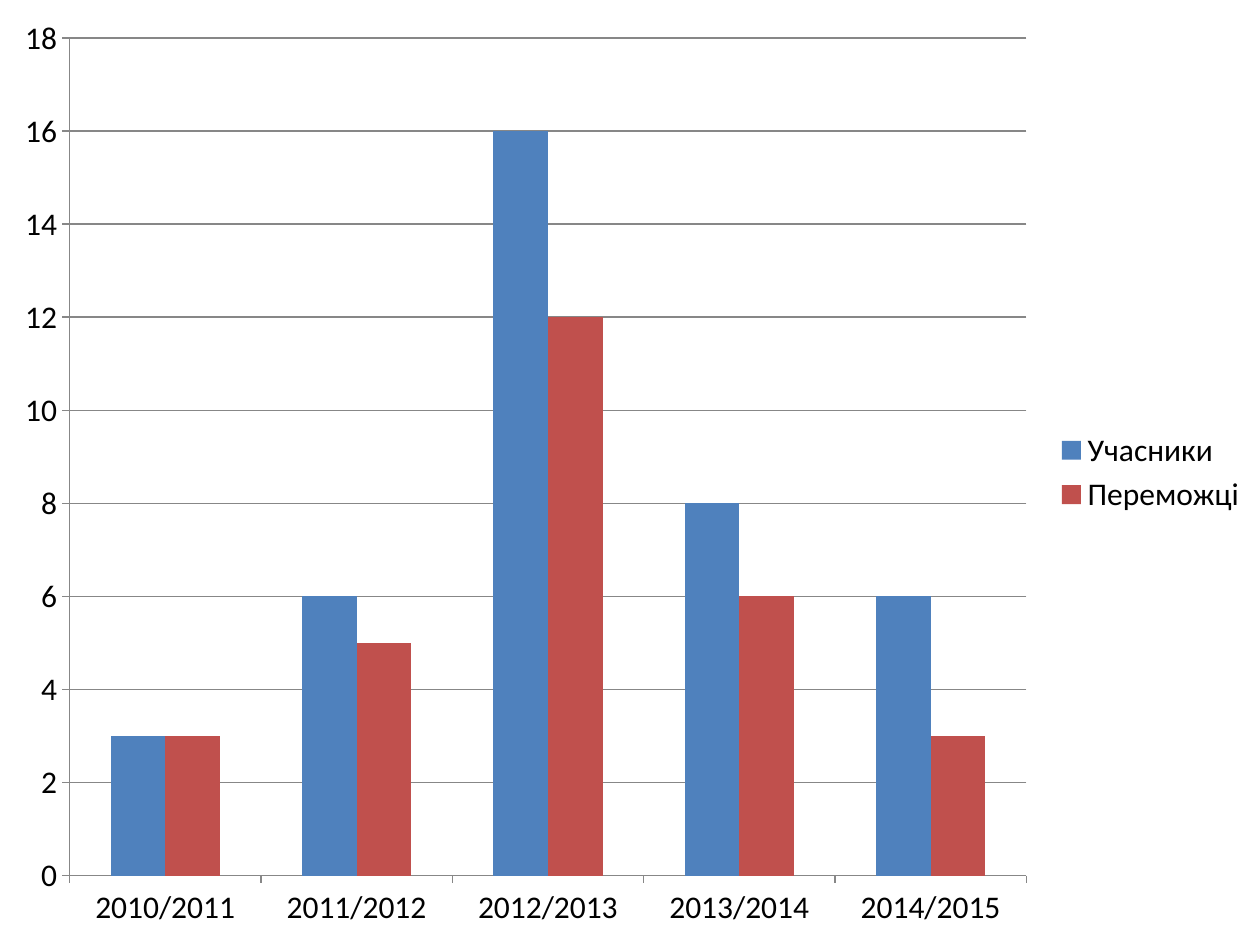
from pptx import Presentation
from pptx.chart import data
from pptx.dml.color import RGBColor
from pptx.enum import chart as ch
from pptx.util import Inches, Pt

COLORS = {"text": "000000", "line": "878787", "Учасники": "4F81BD", "Переможці": "C0504D"}
YEARS = ["2010/2011", "2011/2012", "2012/2013", "2013/2014", "2014/2015"]
RESULTS = {"Учасники": [3, 6, 16, 8, 6], "Переможці": [3, 5, 12, 6, 3]}


def rgb(name):
    """Return the named colour."""
    return RGBColor.from_string(COLORS[name])


def style_line(line):
    """Give an axis or grid line its thin grey stroke."""
    line.color.rgb = rgb("line")
    line.width = Pt(0.75)


def style_axes(chart):
    """Format both axes and the horizontal grid."""
    for axis in (chart.category_axis, chart.value_axis):
        axis.major_tick_mark = ch.XL_TICK_MARK.OUTSIDE
        axis.minor_tick_mark = ch.XL_TICK_MARK.NONE
        style_line(axis.format.line)
    axis = chart.value_axis
    axis.minimum_scale, axis.maximum_scale, axis.major_unit = 0, 18, 2
    axis.has_major_gridlines = True
    style_line(axis.major_gridlines.format.line)


def add_results_chart(s, width, height):
    """Add the column chart of participants and winners."""
    cd = data.CategoryChartData(number_format="General")
    cd.categories = YEARS
    for name, values in RESULTS.items():
        cd.add_series(name, values)
    chart = s.shapes.add_chart(
        ch.XL_CHART_TYPE.COLUMN_CLUSTERED, 0, 0, width, height, cd
    ).chart
    chart.has_title = False
    chart.font.name = "Calibri"
    chart.font.size = Pt(18)
    chart.font.color.rgb = rgb("text")
    chart.has_legend = True
    chart.legend.position = ch.XL_LEGEND_POSITION.RIGHT
    chart.legend.include_in_layout = False
    style_axes(chart)
    plot = chart.plots[0]
    plot.gap_width, plot.overlap = 150, 0
    plot.vary_by_categories = False
    for series in plot.series:
        series.format.fill.solid()
        series.format.fill.fore_color.rgb = rgb(series.name)


def main():
    """Build and save the slide."""
    prs = Presentation()
    prs.slide_width, prs.slide_height = Inches(10), Inches(7.5)
    s = prs.slides.add_slide(prs.slide_layouts[6])
    add_results_chart(s, prs.slide_width, prs.slide_height)
    prs.save("out.pptx")


if __name__ == "__main__":
    main()
